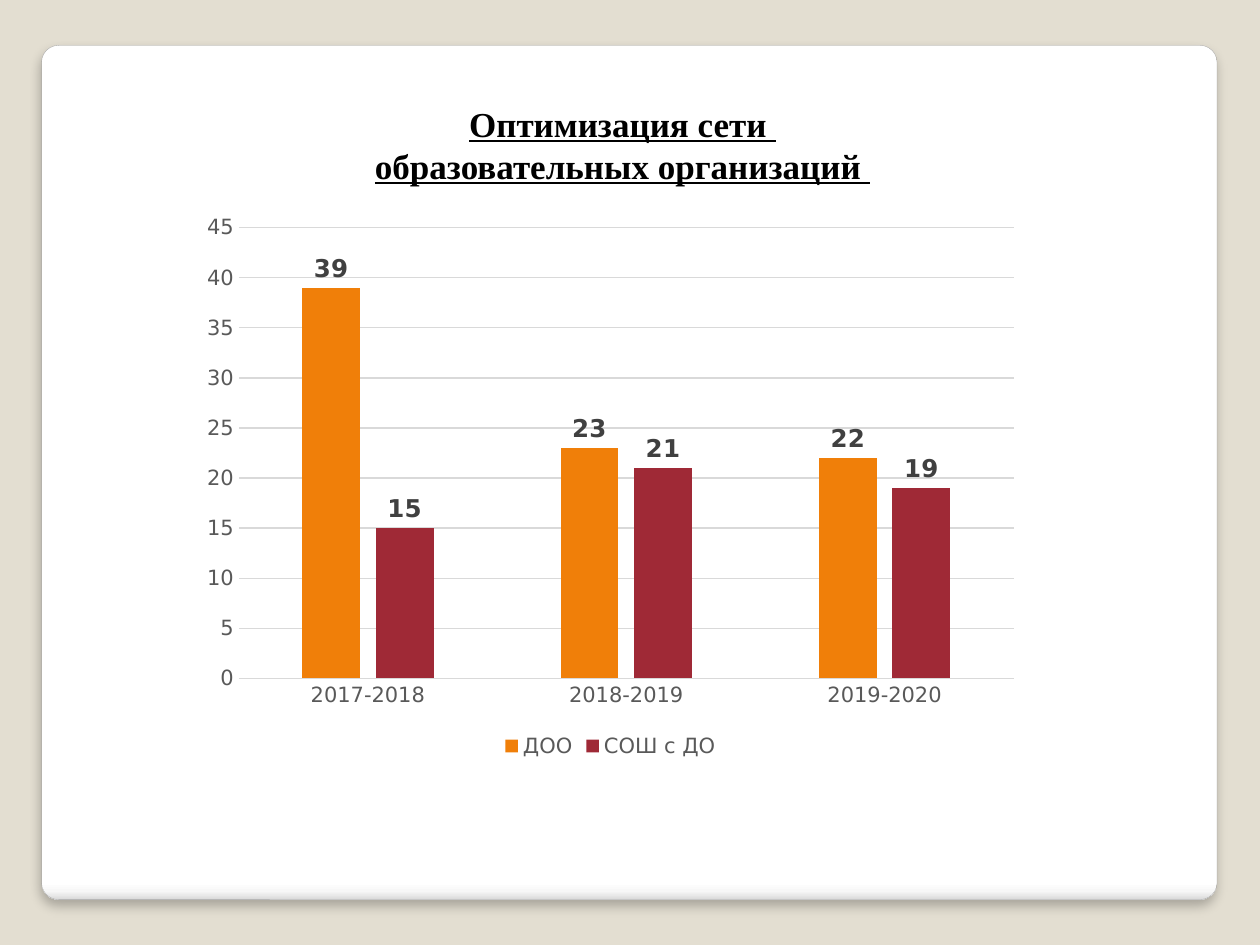
from dataclasses import dataclass

from lxml import etree
from pptx import Presentation
from pptx.chart.data import CategoryChartData
from pptx.dml.color import RGBColor
from pptx.enum.chart import XL_CHART_TYPE, XL_LABEL_POSITION, XL_LEGEND_POSITION, XL_TICK_MARK
from pptx.enum.shapes import MSO_SHAPE
from pptx.enum.text import MSO_ANCHOR, MSO_AUTO_SIZE, PP_ALIGN
from pptx.oxml import parse_xml
from pptx.oxml.ns import nsdecls, qn
from pptx.util import Inches, Pt

COLUMNS = XL_CHART_TYPE.COLUMN_CLUSTERED
OUTSIDE = XL_LABEL_POSITION.OUTSIDE_END
BOTTOM = XL_LEGEND_POSITION.BOTTOM
NO_TICK = XL_TICK_MARK.NONE
ROUNDED = MSO_SHAPE.ROUNDED_RECTANGLE
MIDDLE = MSO_ANCHOR.MIDDLE
FIXED = MSO_AUTO_SIZE.NONE
CENTER = PP_ALIGN.CENTER

SERIF = "Times New Roman"
SANS = "DejaVu Sans"
COLORS = {
    "back": "E3DED1", "card": "FFFFFF", "fade": "F7F7F7", "base": "DADADA",
    "edge": "A4A4A4", "shade": "000000", "title": "000000", "axis": "595959",
    "grid": "D9D9D9", "label": "404040", "orange": "F07F09", "red": "9F2936",
}
YEARS = ["2017-2018", "2018-2019", "2019-2020"]


@dataclass
class Series:
    name: str
    values: list[int]
    color: str


SERIES = [
    Series("ДОО", [39, 23, 22], "orange"),
    Series("СОШ с ДО", [15, 21, 19], "red"),
]


def rgb(name: str) -> RGBColor:
    return RGBColor.from_string(COLORS[name])


def style(font, face: str, size: float, color: str, bold: bool = False) -> None:
    font.name, font.size, font.bold = face, Pt(size), bold
    font.color.rgb = rgb(color)


def add_text(para, text: str, *, face: str = SERIF, size: float = 20,
             color: str = "title", bold: bool = True, line: bool = True) -> None:
    """Append a formatted run to a centred paragraph."""
    para.alignment = CENTER
    run = para.add_run()
    run.text = text
    style(run.font, face, size, color, bold)
    run.font.underline = line


def add_card(slide) -> None:
    """Draw the rounded panel behind everything else."""
    card = slide.shapes.add_shape(ROUNDED, Inches(0.33), Inches(0.36), Inches(9.33), Inches(6.78))
    card.adjustments[0] = 0.02
    card.line.color.rgb = rgb("edge")
    card.line.width = Pt(0.16)
    card.fill.gradient()
    card.fill.gradient_angle = 270
    stops = card._element.spPr.find(qn("a:gradFill")).find(qn("a:gsLst"))
    for stop in list(stops):
        stops.remove(stop)
    for place, name in [(0, "card"), (98, "card"), (99, "fade"), (100, "base")]:
        stop = etree.SubElement(stops, qn("a:gs"), pos=str(place * 1000))
        etree.SubElement(stop, qn("a:srgbClr"), val=COLORS[name])
    card._element.spPr.append(parse_xml(
        f'<a:effectLst {nsdecls("a")}>'
        f'<a:outerShdw blurRad="{Pt(6)}" dist="{Pt(4)}" dir="5400000" algn="t" rotWithShape="0">'
        f'<a:srgbClr val="{COLORS["shade"]}"><a:alpha val="25000"/></a:srgbClr>'
        '</a:outerShdw></a:effectLst>'))
    slide.shapes._spTree.insert(2, card._element)


def add_title(slide) -> None:
    title = slide.shapes.title
    title.left, title.top = Inches(1.5), Inches(0.76)
    title.width, title.height = Inches(6.88), Inches(0.77)
    frame = title.text_frame
    frame.word_wrap, frame.auto_size = True, FIXED
    frame.vertical_anchor = MIDDLE
    add_text(frame.paragraphs[0], "Оптимизация сети ")
    last = frame.add_paragraph()
    add_text(last, "образовательных организаций")
    add_text(last, " ", bold=False)


def add_bars(slide) -> None:
    data = CategoryChartData()
    data.categories = YEARS
    for item in SERIES:
        data.add_series(item.name, item.values)
    chart = slide.shapes.add_chart(
        COLUMNS, Inches(1.51), Inches(1.62), Inches(6.67), Inches(4.44), data).chart
    style(chart.font, SANS, 10, "title")
    chart.has_title = False
    chart.has_legend = True
    chart.legend.position = BOTTOM
    chart.legend.include_in_layout = False
    style(chart.legend.font, SANS, 12, "axis")

    years, counts = chart.category_axis, chart.value_axis
    for axis in (years, counts):
        axis.major_tick_mark = axis.minor_tick_mark = NO_TICK
        style(axis.tick_labels.font, SANS, 12, "axis")
    counts.format.line.fill.background()
    counts.minimum_scale, counts.maximum_scale, counts.major_unit = 0, 45, 5
    for line in (years.format.line, counts.major_gridlines.format.line):
        line.color.rgb = rgb("grid")
        line.width = Pt(0.75)

    plot = chart.plots[0]
    plot.gap_width, plot.overlap = 219, -27
    plot.vary_by_categories = False
    for bars, item in zip(plot.series, SERIES):
        bars.format.fill.solid()
        bars.format.fill.fore_color.rgb = rgb(item.color)
        labels = bars.data_labels
        labels.show_value = True
        labels.position = OUTSIDE
        style(labels.font, SANS, 14, "label", bold=True)


def main() -> None:
    deck = Presentation()
    deck.slide_width, deck.slide_height = Inches(10), Inches(7.5)
    slide = deck.slides.add_slide(deck.slide_layouts[5])
    slide.background.fill.solid()
    slide.background.fill.fore_color.rgb = rgb("back")
    add_card(slide)
    add_title(slide)
    add_bars(slide)
    deck.save("out.pptx")


if __name__ == "__main__":
    main()
